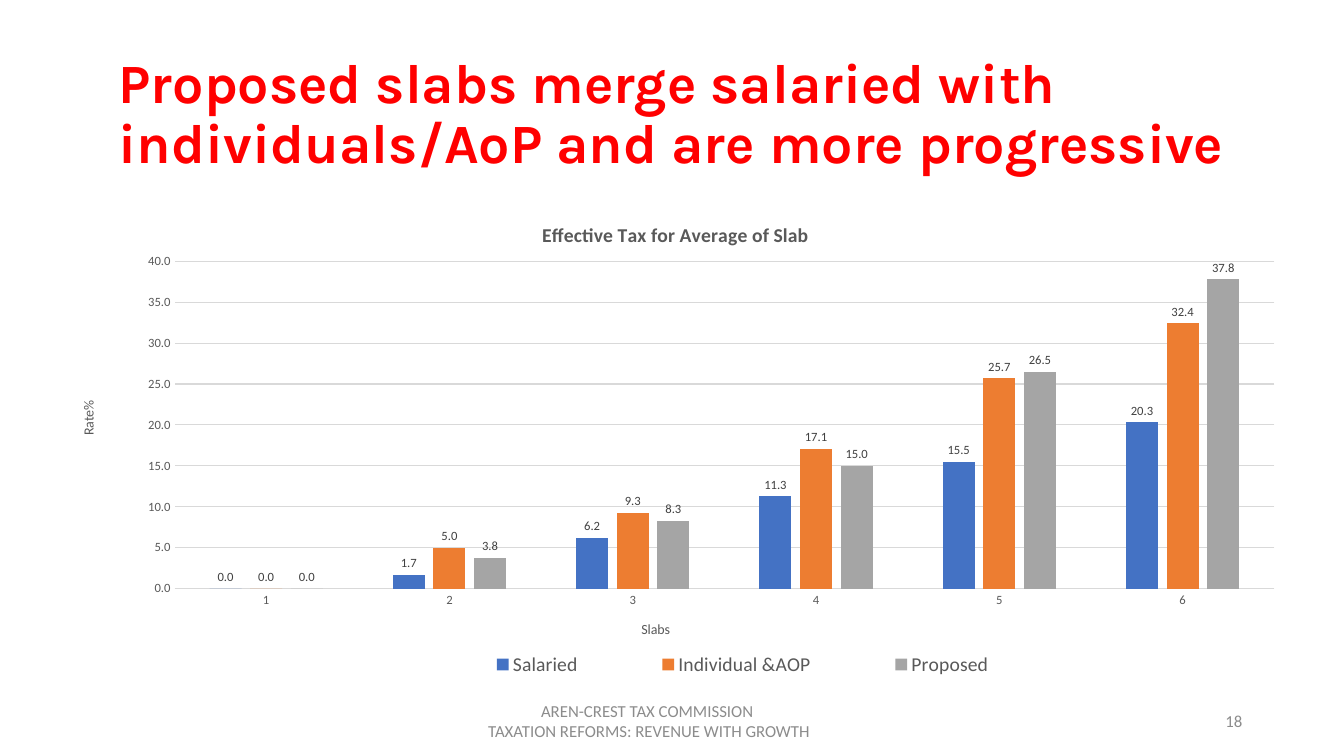
from lxml.etree import SubElement
from pptx import Presentation
from pptx.chart.data import CategoryChartData
from pptx.dml.color import RGBColor
from pptx.enum.chart import XL_CHART_TYPE, XL_LABEL_POSITION, XL_LEGEND_POSITION, XL_TICK_MARK
from pptx.enum.text import MSO_ANCHOR, PP_ALIGN
from pptx.oxml import parse_xml
from pptx.oxml.ns import nsdecls, qn
from pptx.util import Inches, Pt

COLORS = {
    "title": "FF0000",
    "footer": "8C8C8C",
    "axis": "595959",
    "label": "404040",
    "grid": "D9D9D9",
    "Salaried": "4472C4",
    "Individual &AOP": "ED7D31",
    "Proposed": "A5A5A5",
}
RATES = {
    "Salaried": (0, 1.7, 6.2, 11.3, 15.5, 20.3),
    "Individual &AOP": (0, 5, 9.3, 17.1, 25.7, 32.4),
    "Proposed": (0, 3.8, 8.3, 15, 26.5, 37.8),
}
SLABS = ("1", "2", "3", "4", "5", "6")


def color(name):
    return RGBColor.from_string(COLORS[name])


def style_font(font, size, color_name, bold=False, family="Calibri"):
    font.name = family
    font.size = Pt(size)
    font.bold = bold
    font.color.rgb = color(color_name)


def add_text(slide, box, lines, size, color_name, alignment, bold=False, family="Calibri", spacing=1.0):
    shape = slide.shapes.add_textbox(*map(Inches, box))
    frame = shape.text_frame
    frame.word_wrap = True
    frame.vertical_anchor = MSO_ANCHOR.MIDDLE
    for index, line in enumerate(lines):
        paragraph = frame.paragraphs[0] if index == 0 else frame.add_paragraph()
        paragraph.alignment = alignment
        paragraph.line_spacing = spacing
        run = paragraph.add_run()
        run.text = line
        style_font(run.font, size, color_name, bold, family)


def add_title(slide, box):
    add_text(
        slide, box,
        ["Proposed slabs merge salaried with individuals/AoP and are more progressive"],
        39.6, "title", PP_ALIGN.LEFT, True, "Karla", 0.9,
    )


def add_footer(slide, box):
    left, top, width, height = box
    add_text(slide, (left + width - 3, top, 3, height), ["18"], 12, "footer", PP_ALIGN.RIGHT)
    add_text(
        slide, (left, top, 4.5, height),
        ["AREN-CREST TAX COMMISSION", " TAXATION REFORMS: REVENUE WITH GROWTH"],
        12, "footer", PP_ALIGN.CENTER,
    )


def set_layout(element, inner=False, **fractions):
    for layout in element.findall(qn("c:layout")):
        element.remove(layout)
    layout = parse_xml(f"<c:layout {nsdecls('c')}/>")
    manual = SubElement(layout, qn("c:manualLayout"))
    if inner:
        SubElement(manual, qn("c:layoutTarget")).set("val", "inner")
    for side in ("x", "y"):
        SubElement(manual, qn(f"c:{side}Mode")).set("val", "edge")
    for name, value in fractions.items():
        SubElement(manual, qn(f"c:{name}")).set("val", str(value))
    overlay = element.find(qn("c:overlay"))
    if overlay is None:
        element.insert(0, layout)
    else:
        overlay.addprevious(layout)


def write_chart_title(title, text, size, bold=False):
    run = title.text_frame.paragraphs[0].add_run()
    run.text = text
    style_font(run.font, size, "axis", bold)


def style_axes(chart):
    for axis, title in ((chart.category_axis, "Slabs"), (chart.value_axis, "Rate%")):
        axis.major_tick_mark = XL_TICK_MARK.NONE
        axis.minor_tick_mark = XL_TICK_MARK.NONE
        style_font(axis.tick_labels.font, 9, "axis")
        write_chart_title(axis.axis_title, title, 10)
    line = chart.category_axis.format.line
    line.color.rgb = color("grid")
    line.width = Pt(0.75)
    rates = chart.value_axis
    rates.minimum_scale, rates.maximum_scale, rates.major_unit = 0, 40, 5
    rates.tick_labels.number_format = "0.0"
    rates.tick_labels.number_format_is_linked = False
    rates.format.line.fill.background()
    rates.major_gridlines.format.line.color.rgb = color("grid")
    rates.major_gridlines.format.line.width = Pt(0.75)


def style_series(series):
    series.format.fill.solid()
    series.format.fill.fore_color.rgb = color(series.name)
    series.invert_if_negative = False
    labels = series.data_labels
    labels.show_value = True
    labels.number_format = "0.0"
    labels.number_format_is_linked = False
    labels.position = XL_LABEL_POSITION.OUTSIDE_END
    style_font(labels.font, 9, "label")


def add_tax_chart(slide, box):
    data = CategoryChartData(number_format="0.0")
    data.categories = SLABS
    for name, values in RATES.items():
        data.add_series(name, values)
    chart = slide.shapes.add_chart(
        XL_CHART_TYPE.COLUMN_CLUSTERED, *map(Inches, box), data
    ).chart
    chart.font.name = "Calibri"
    chart.font.size = Pt(10)
    chart.has_title = True
    write_chart_title(chart.chart_title, "Effective Tax for Average of Slab", 14, True)
    style_axes(chart)
    plot = chart.plots[0]
    plot.gap_width = 219
    plot.overlap = -27
    plot.vary_by_categories = False
    for series in plot.series:
        style_series(series)
    chart.has_legend = True
    chart.legend.position = XL_LEGEND_POSITION.BOTTOM
    chart.legend.include_in_layout = False
    style_font(chart.legend.font, 14, "axis")
    root = chart.element
    rate_title = root.xpath(".//c:valAx/c:title")[0]
    body = rate_title.xpath("c:tx/c:rich/a:bodyPr")[0]
    body.set("rot", "-5400000")
    body.set("vert", "horz")
    set_layout(root.xpath(".//c:plotArea")[0], True, x=0.09, y=0.12, w=0.9, h=0.67)
    set_layout(root.xpath(".//c:catAx/c:title")[0], x=0.47, y=0.85)
    set_layout(rate_title, x=0.01, y=0.4)
    set_layout(root.xpath(".//c:legend")[0], x=0.29, y=0.91, w=0.53, h=0.07)


def main():
    presentation = Presentation()
    presentation.slide_width = Inches(13.33)
    presentation.slide_height = Inches(7.5)
    slide = presentation.slides.add_slide(presentation.slide_layouts[6])
    add_title(slide, (1.08, 0.56, 11.33, 1.17))
    add_footer(slide, (4.17, 6.95, 8.25, 0.4))
    add_tax_chart(slide, (0.64, 2.01, 12.12, 4.85))
    presentation.save("out.pptx")


if __name__ == "__main__":
    main()
